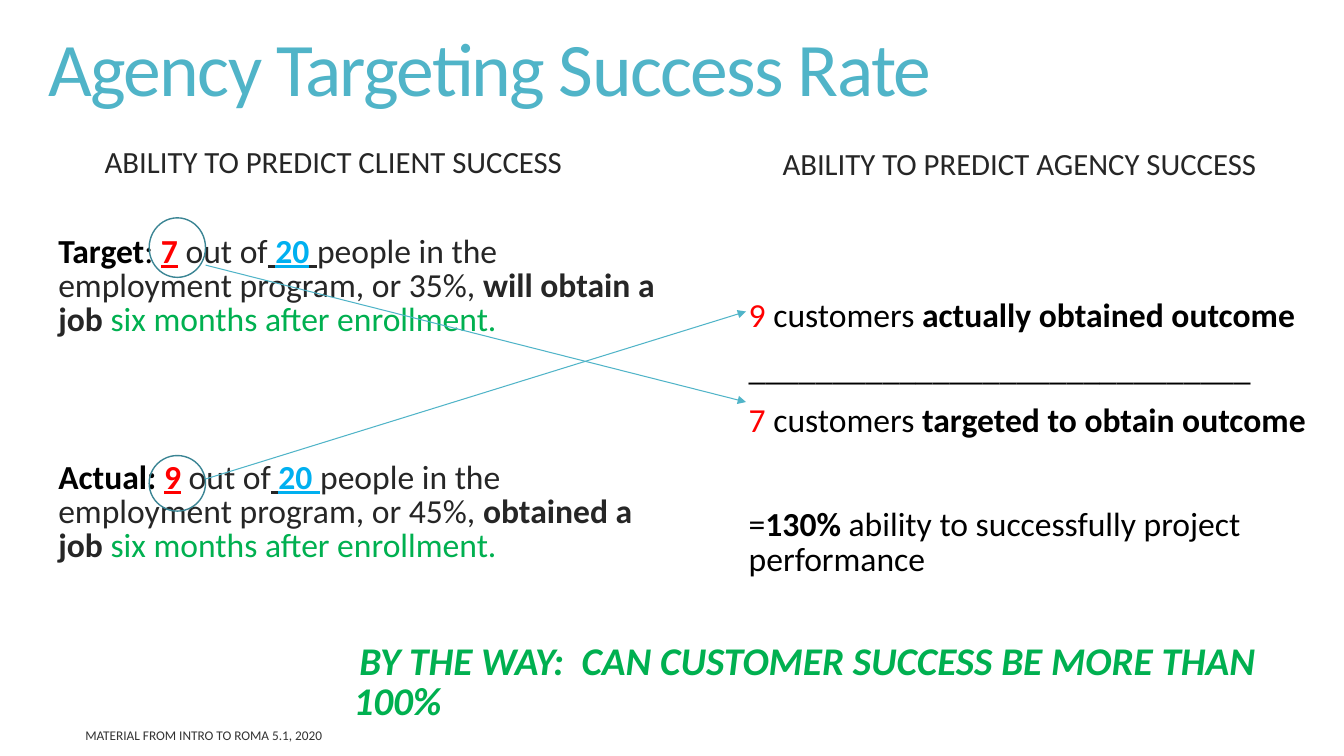
from lxml.etree import SubElement
from pptx import Presentation
from pptx.dml.color import RGBColor
from pptx.enum.shapes import MSO_CONNECTOR, MSO_SHAPE
from pptx.enum.text import MSO_ANCHOR, MSO_AUTO_SIZE, PP_ALIGN
from pptx.oxml.ns import qn
from pptx.util import Cm, Pt

FONT = "Calibri"
TEAL, DARK_TEAL = "50B4C8", "3B8594"
BLACK, GRAY, RED, BLUE, GREEN = "000000", "262626", "FF0000", "00B0F0", "00B050"

# Boxes are left, top, width, height in centimetres.
TITLE = ("Agency Targeting Success Rate", (0.97, 0, 29.21, 3.68))
HEADINGS = [
    ("ABILITY TO PREDICT CLIENT SUCCESS", (2.39, 3, 14.33, 2.29), PP_ALIGN.LEFT),
    ("ABILITY TO PREDICT AGENCY SUCCESS", (18.49, 3.05, 14.4, 2.29), PP_ALIGN.CENTER),
]

# Each paragraph: space before in points, then runs of text, colour and style
# (b = bold, i = italic, u = underlined).
CLIENT_BOX = (0.97, 5.82, 15.98, 12.22)
CLIENT_RESULTS = [
    (0, [("Target", BLACK, "b"), (": ", BLACK, ""), ("7", RED, "bu"),
         (" out of", GRAY, ""), (" ", GRAY, "bu"), ("20", BLUE, "bu"), (" ", GRAY, "bu"),
         ("people in the employment program, or 35%, ", GRAY, ""),
         ("will obtain a job ", GRAY, "b"), ("six months after enrollment.", GREEN, "")]),
    (88, [("Actual: ", BLACK, "b"), ("9", RED, "bu"),
          (" out of", GRAY, ""), (" ", GRAY, "bu"), ("20 ", BLUE, "bu"),
          ("people in the employment program, or 45%, ", GRAY, ""),
          ("obtained a job ", GRAY, "b"), ("six months after enrollment.", GREEN, "")]),
]
AGENCY_BOX = (18.49, 7.44, 15.93, 9.4)
AGENCY_RESULTS = [
    (0, [("9", RED, ""), (" customers ", BLACK, ""),
         ("actually obtained outcome", BLACK, "b")]),
    (13, [("_" * 30, BLACK, "")]),
    (13, [("7", RED, ""), (" customers ", BLACK, ""),
          ("targeted to obtain outcome", BLACK, "b")]),
    (50, [("=", BLACK, ""), ("130% ", BLACK, "b"),
          ("ability to successfully project performance", BLACK, "")]),
]
QUESTION_BOX = (8.66, 16.13, 24.71, 2.18)
QUESTION = [(0, [("BY THE WAY:  CAN CUSTOMER SUCCESS BE MORE THAN 100%", GREEN, "bi")])]
CREDIT_BOX = (1.9, 18.21, 13.97, 0.64)
CREDIT = [(0, [("MATERIAL FROM INTRO TO ROMA 5.1, 2020", "333333", "")])]

CIRCLES = [(3.76, 5.49, 1.42, 1.5), (3.76, 11.48, 1.42, 1.4)]
ARROWS = [(5.18, 12.07, 18.8, 7.85), (5.18, 6.68, 18.8, 10.13)]


def color(value):
    return RGBColor.from_string(value)


def lengths(values):
    return [Cm(value) for value in values]


def style_run(run, size, run_color, style=""):
    run.font.name = FONT
    run.font.size = Pt(size)
    run.font.color.rgb = color(run_color)
    run.font.bold = "b" in style
    run.font.italic = "i" in style
    run.font.underline = "u" in style


def add_text(slide, box, paragraphs, size, anchor=MSO_ANCHOR.TOP, margin=0,
             first_line=0, spacing=0.85, align=PP_ALIGN.LEFT):
    """Add a text box; margin and first_line are paragraph indents in cm."""
    text_frame = slide.shapes.add_textbox(*lengths(box)).text_frame
    text_frame.word_wrap = True
    text_frame.vertical_anchor = anchor
    for index, (space_before, runs) in enumerate(paragraphs):
        paragraph = text_frame.add_paragraph() if index else text_frame.paragraphs[0]
        paragraph.alignment = align
        paragraph.line_spacing = spacing
        paragraph.space_before = Pt(space_before)
        properties = paragraph._p.get_or_add_pPr()
        properties.set("marL", str(Cm(margin)))
        properties.set("indent", str(Cm(first_line)))
        for text, run_color, style in runs:
            run = paragraph.add_run()
            run.text = text
            style_run(run, size, run_color, style)


def add_title(slide):
    text, box = TITLE
    title = slide.shapes.title
    title.left, title.top, title.width, title.height = lengths(box)
    text_frame = title.text_frame
    text_frame.text = text
    text_frame.word_wrap = True
    text_frame.auto_size = MSO_AUTO_SIZE.NONE
    text_frame.vertical_anchor = MSO_ANCHOR.MIDDLE
    paragraph = text_frame.paragraphs[0]
    paragraph.alignment = PP_ALIGN.LEFT
    paragraph.line_spacing = 0.85
    run = paragraph.runs[0]
    style_run(run, 54, TEAL)
    run.font._element.set("spc", "-120")


def add_circle(slide, box):
    circle = slide.shapes.add_shape(MSO_SHAPE.OVAL, *lengths(box))
    circle.shadow.inherit = False
    circle.fill.background()
    circle.line.color.rgb = color(DARK_TEAL)
    circle.line.width = Pt(1)


def add_arrow(slide, ends):
    arrow = slide.shapes.add_connector(MSO_CONNECTOR.STRAIGHT, *lengths(ends))
    arrow.line.color.rgb = color(TEAL)
    arrow.line.width = Pt(0.75)
    SubElement(arrow.line._get_or_add_ln(), qn("a:tailEnd"), type="triangle")
    SubElement(arrow._element.spPr, qn("a:effectLst"))


def main():
    presentation = Presentation()
    presentation.slide_width, presentation.slide_height = Cm(33.87), Cm(19.05)
    slide = presentation.slides.add_slide(presentation.slide_layouts.get_by_name("Title Only"))
    add_title(slide)
    for text, box, align in HEADINGS:
        add_text(slide, box, [(0, [(text, GRAY, "")])], 22, MSO_ANCHOR.MIDDLE, align=align)
    add_text(slide, CLIENT_BOX, CLIENT_RESULTS, 24, margin=0.25)
    add_text(slide, AGENCY_BOX, AGENCY_RESULTS, 24, margin=0.13)
    for box in CIRCLES:
        add_circle(slide, box)
    for ends in ARROWS:
        add_arrow(slide, ends)
    add_text(slide, QUESTION_BOX, QUESTION, 28, MSO_ANCHOR.MIDDLE, first_line=0.15)
    add_text(slide, CREDIT_BOX, CREDIT, 9.5, MSO_ANCHOR.MIDDLE, spacing=1.0)
    presentation.save("out.pptx")


if __name__ == "__main__":
    main()
